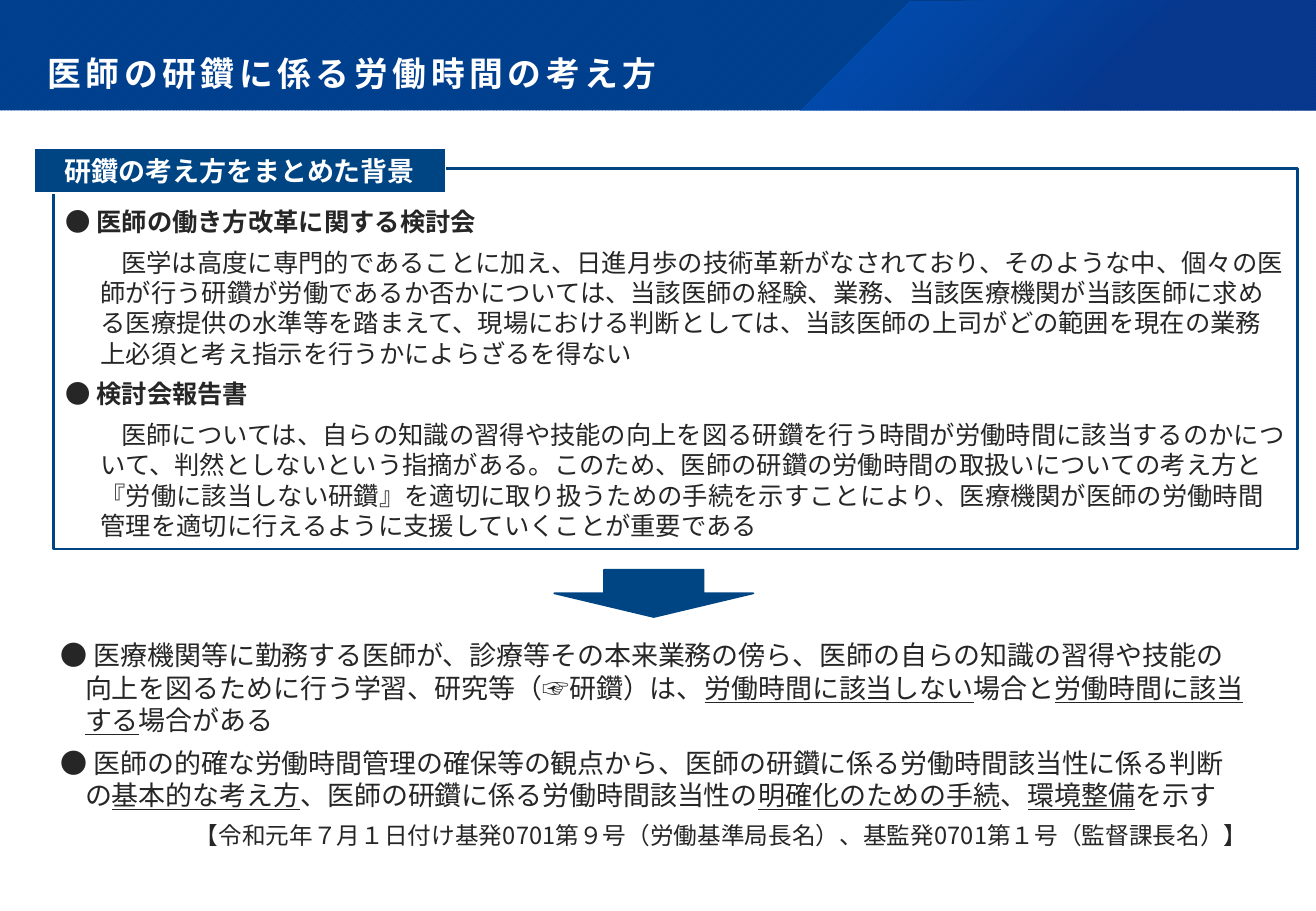
from dataclasses import dataclass

from pptx import Presentation
from pptx.dml.color import RGBColor
from pptx.enum.dml import MSO_PATTERN
from pptx.enum.lang import MSO_LANGUAGE_ID as Language
from pptx.enum.shapes import MSO_SHAPE as Shape
from pptx.enum.text import MSO_ANCHOR as Anchor, MSO_AUTO_SIZE as AutoSize, PP_ALIGN as Align
from pptx.oxml import parse_xml
from pptx.oxml.ns import nsdecls, qn
from pptx.util import Inches, Pt

WIDTH, HEIGHT = Inches(10.83), Inches(7.5)


@dataclass(frozen=True)
class Theme:
    navy: str = "004583"
    header: str = "004292"
    header_weave: str = "003579"
    glow_start: str = "0064DF"
    glow_end: str = "0C338E"
    ink: str = "262626"
    white: str = "FFFFFF"
    title_font: str = "Lato"
    font: str = "Noto Sans CJK JP"
    title_size: float = 20
    large_size: float = 16
    text_size: float = 15
    source_size: float = 14
    leading: float = 1.2


THEME = Theme()
HEADER_HEIGHT = 12.13

# Underscores enclose the marked spans: (text, left margin, first-line indent, space after)
BACKGROUND = [
    ("● _医師の働き方改革に関する検討会_", 0.2, -0.2, 6),
    ("医学は高度に専門的であることに加え、日進月歩の技術革新がなされており、そのような中、"
     "個々の医師が行う研鑽が労働であるか否かについては、当該医師の経験、業務、当該医療機関が"
     "当該医師に求める医療提供の水準等を踏まえて、現場における判断としては、当該医師の上司が"
     "どの範囲を現在の業務上必須と考え指示を行うかによらざるを得ない", 0.29, 0.17, 6),
    ("● _検討会報告書_", 0.2, -0.2, 6),
    ("医師については、自らの知識の習得や技能の向上を図る研鑽を行う時間が労働時間に該当するのか"
     "について、判然としないという指摘がある。このため、医師の研鑽の労働時間の取扱いについての"
     "考え方と『労働に該当しない研鑽』を適切に取り扱うための手続を示すことにより、医療機関が"
     "医師の労働時間管理を適切に行えるように支援していくことが重要である", 0.29, 0.17, 0),
]
CONCLUSIONS = [
    "● 医療機関等に勤務する医師が、診療等その本来業務の傍ら、医師の自らの知識の習得や技能の"
    "向上を図るために行う学習、研究等（☞研鑽）は、_労働時間に該当しない_場合と"
    "_労働時間に該当する_場合がある",
    "● 医師の的確な労働時間管理の確保等の観点から、医師の研鑽に係る労働時間該当性に係る判断の"
    "_基本的な考え方_、医師の研鑽に係る労働時間該当性の_明確化のための手続_、_環境整備_を示す",
]
SOURCE = "【令和元年７月１日付け基発0701第９号（労働基準局長名）、基監発0701第１号（監督課長名）】"


def color(code):
    return RGBColor.from_string(code)


def area(left, top, width, height):
    """Turn percentages of the slide into lengths."""
    return [round(share * side / 100)
            for share, side in zip((left, top, width, height), (WIDTH, HEIGHT) * 2)]


def place(shape, *shares):
    shape.left, shape.top, shape.width, shape.height = area(*shares)


def add_block(page, kind, shares, fill=None, line=None, weight=1):
    block = page.shapes.add_shape(kind, *area(*shares))
    block.shadow.inherit = False
    if fill:
        block.fill.solid()
        block.fill.fore_color.rgb = color(fill)
    else:
        block.fill.background()
    if line:
        block.line.color.rgb = color(line)
        block.line.width = Pt(weight)
    else:
        block.line.fill.background()
    return block


def set_frame(frame, anchor, left=0.1, top=0.05, right=0.1, bottom=0.05):
    frame.word_wrap = True
    frame.auto_size = AutoSize.NONE
    frame.vertical_anchor = anchor
    frame.margin_left, frame.margin_top = Inches(left), Inches(top)
    frame.margin_right, frame.margin_bottom = Inches(right), Inches(bottom)


def style_span(span, size, ink, bold=False, underline=False, font=THEME.font):
    face = span.font
    face.name, face.size, face.bold, face.underline = font, Pt(size), bold, underline
    face.color.rgb = color(ink)
    face.language_id = Language.JAPANESE
    east_asian = parse_xml(f'<a:ea {nsdecls("a")} typeface="{THEME.font}"/>')
    span.font._element.find(qn("a:latin")).addnext(east_asian)


def write_para(para, text, size, mark, margin=0.2, indent=-0.2,
               before=0, after=0, align=Align.LEFT):
    para.alignment = align
    para.space_before, para.space_after = Pt(before), Pt(after)
    para.line_spacing = Pt(size * THEME.leading)
    layout = para._p.get_or_add_pPr()
    layout.set("marL", str(Inches(margin)))
    layout.set("indent", str(Inches(indent)))
    layout.append(parse_xml(f'<a:buNone {nsdecls("a")}/>'))
    for index, words in enumerate(text.split("_")):
        if words:
            span = para.add_run()
            span.text = words
            style_span(span, size, THEME.ink, **{mark: index % 2 == 1})


def next_para(frame, index):
    return frame.add_paragraph() if index else frame.paragraphs[0]


def add_header(page):
    band = add_block(page, Shape.RECTANGLE, (0, 0, 100, HEADER_HEIGHT))
    band.fill.patterned()
    band.fill.pattern = MSO_PATTERN.DARK_UPWARD_DIAGONAL
    band.fill.fore_color.rgb = color(THEME.header_weave)
    band.fill.back_color.rgb = color(THEME.header)

    # Translucent slanted panel on the right
    corners = [area(x, y, 0, 0)[:2] for x, y in
               [(69.16, 0.13), (100, 0), (100, HEADER_HEIGHT), (60.76, HEADER_HEIGHT)]]
    outline = page.shapes.build_freeform(*corners[0], scale=1.0)
    outline.add_line_segments(corners[1:], close=True)
    panel = outline.convert_to_shape()
    panel.shadow.inherit = False
    panel.line.fill.background()
    panel.fill.background()
    stops = "".join(
        f'<a:gs pos="{at}000"><a:srgbClr val="{code}"><a:alpha val="{alpha}000"/></a:srgbClr></a:gs>'
        for at, code, alpha in [(0, THEME.glow_start, 50), (62, THEME.glow_end, 55)])
    glow = parse_xml(
        f'<a:gradFill {nsdecls("a")} rotWithShape="1"><a:gsLst>{stops}</a:gsLst>'
        '<a:path path="circle"><a:fillToRect r="100000" b="100000"/></a:path></a:gradFill>')
    empty_fill = panel.element.spPr.find(qn("a:noFill"))
    empty_fill.getparent().replace(empty_fill, glow)


def add_title(page, text):
    title = page.shapes.title
    place(title, 0, 0, 100, HEADER_HEIGHT)
    set_frame(title.text_frame, Anchor.BOTTOM, 0.39, 0.36, 0.36, 0.14)
    title.text_frame.text = text
    para = title.text_frame.paragraphs[0]
    para.alignment, para.line_spacing = Align.LEFT, 0.9
    span = para.runs[0]
    style_span(span, THEME.title_size, THEME.white, bold=True, font=THEME.title_font)
    span.font._element.set("spc", "270")
    title.element.getparent().append(title.element)  # bring in front of the header


def add_background(page, heading):
    box = add_block(page, Shape.RECTANGLE, (4.06, 18.53, 94.55, 41.73), line=THEME.navy, weight=1.5)
    set_frame(box.text_frame, Anchor.TOP, top=0.31)
    for index, (text, margin, indent, after) in enumerate(BACKGROUND):
        write_para(next_para(box.text_frame, index), text, THEME.text_size, "bold",
                   margin, indent, after=after)

    # Heading tab over the frame
    tab = add_block(page, Shape.RECTANGLE, (2.59, 16.27, 31.3, 4.93), THEME.navy, THEME.white, 0.75)
    set_frame(tab.text_frame, Anchor.MIDDLE)
    tab.text_frame.text = heading
    para = tab.text_frame.paragraphs[0]
    para.alignment = Align.CENTER
    style_span(para.runs[0], THEME.large_size, THEME.white, bold=True)


def add_conclusions(page):
    body = page.placeholders[1]
    place(body, 3.69, 69.2, 92.06, 24.67)
    frame = body.text_frame
    set_frame(frame, Anchor.TOP, top=0.07)
    for index, text in enumerate(CONCLUSIONS):
        write_para(next_para(frame, index), text, THEME.large_size, "underline",
                   before=6 if index else 0)
    write_para(frame.add_paragraph(), SOURCE, THEME.source_size, "underline",
               before=6, align=Align.RIGHT)
    body.element.getparent().append(body.element)


def main():
    deck = Presentation()
    deck.slide_width, deck.slide_height = WIDTH, HEIGHT
    page = deck.slides.add_slide(deck.slide_layouts[1])
    add_header(page)
    add_title(page, "医師の研鑽に係る労働時間の考え方")
    add_background(page, "研鑽の考え方をまとめた背景")
    add_conclusions(page)
    add_block(page, Shape.DOWN_ARROW, (42.11, 62.53, 15.14, 5.2), THEME.navy, THEME.navy)
    deck.save("out.pptx")


if __name__ == "__main__":
    main()
